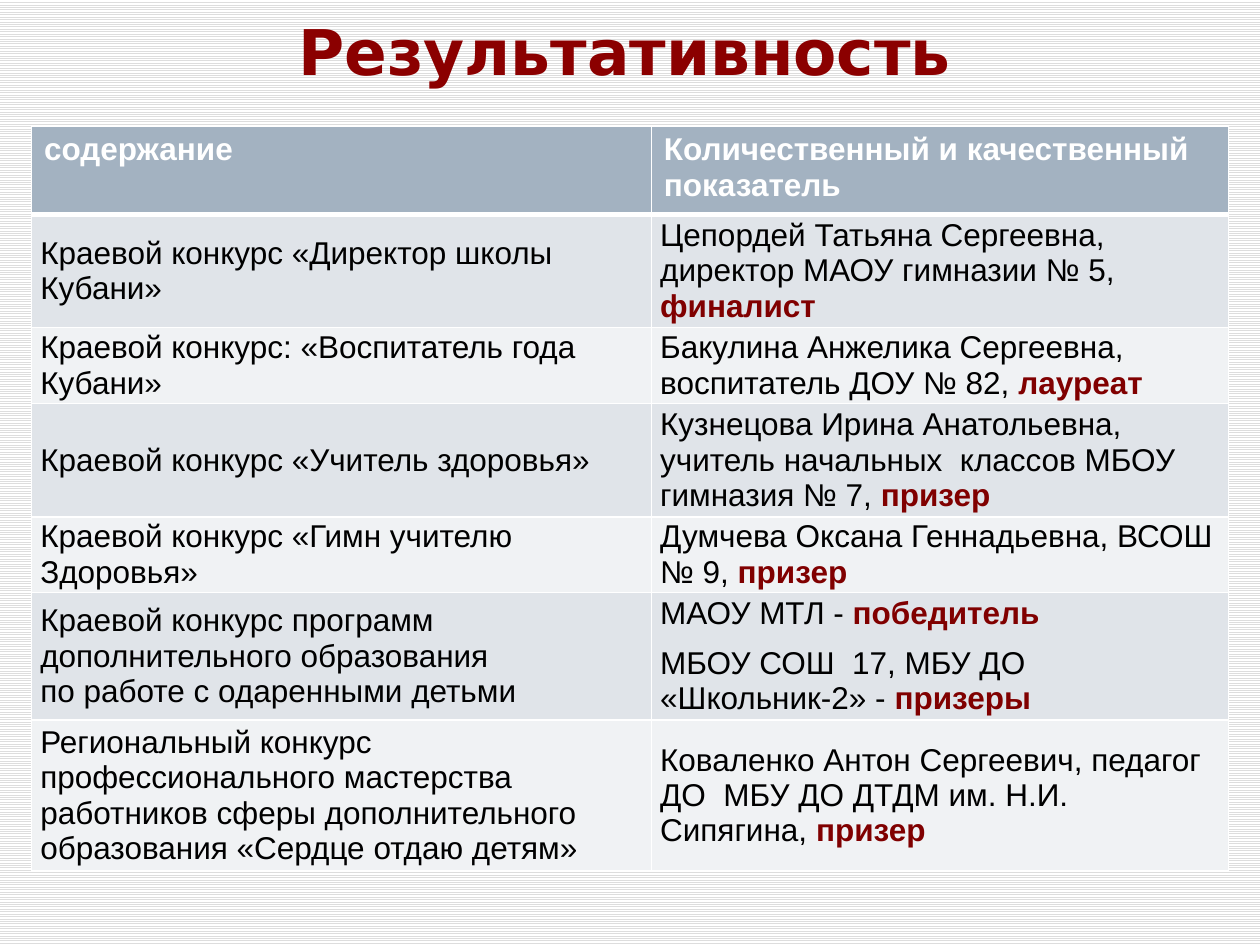
from dataclasses import dataclass

from lxml.etree import SubElement
from pptx import Presentation
from pptx.dml.color import RGBColor
from pptx.enum.dml import MSO_PATTERN
from pptx.enum.text import MSO_ANCHOR, PP_ALIGN
from pptx.oxml.ns import qn
from pptx.util import Inches, Pt


@dataclass(frozen=True)
class Theme:
    title_font: str = "DejaVu Sans"
    body_font: str = "Arial"
    title_size: int = 36
    body_size: int = 18
    title: str = "8B0000"
    award: str = "800000"
    text: str = "000000"
    white: str = "FFFFFF"
    stripe: str = "DDDDDD"
    header: str = "A3B2C1"
    bands: tuple[str, str] = ("E0E4E9", "F0F2F4")


@dataclass(frozen=True)
class Result:
    """A paragraph: plain wording followed by a highlighted award."""
    wording: str
    award: str = ""


@dataclass(frozen=True)
class Row:
    height: float
    contest: str
    results: tuple[Result, ...]


THEME = Theme()
COLUMN_WIDTHS = (4.92, 4.58)
HEADER = Row(0.7, "содержание", (Result("Количественный и качественный показатель"),))
ROWS = (
    Row(0.9, "Краевой конкурс «Директор школы Кубани»",
        (Result("Цепордей Татьяна Сергеевна, директор МАОУ гимназии № 5, ", "финалист"),)),
    Row(0.6, "Краевой конкурс: «Воспитатель года Кубани»",
        (Result("Бакулина Анжелика Сергеевна, воспитатель ДОУ № 82, ", "лауреат"),)),
    Row(0.9, "Краевой конкурс «Учитель здоровья»",
        (Result("Кузнецова Ирина Анатольевна, учитель начальных  классов МБОУ гимназия № 7, ",
                "призер"),)),
    Row(0.6, "Краевой конкурс «Гимн учителю Здоровья»",
        (Result("Думчева Оксана Геннадьевна, ВСОШ № 9, ", "призер"),)),
    Row(1.01, "Краевой конкурс программ дополнительного образования \vпо работе с одаренными детьми",
        (Result("МАОУ МТЛ - ", "победитель"),
         Result("МБОУ СОШ  17, МБУ ДО «Школьник-2» - ", "призеры"))),
    Row(1.2, "Региональный конкурс профессионального мастерства работников сферы "
             "дополнительного образования «Сердце отдаю детям»",
        (Result("Коваленко Антон Сергеевич, педагог ДО  МБУ ДО ДТДМ им. Н.И. Сипягина, ",
                "призер"),)),
)


def rgb(color: str) -> RGBColor:
    return RGBColor.from_string(color)


def style_font(font, name: str, size: int, color: str, bold: bool) -> None:
    font.name, font.size, font.bold = name, Pt(size), bold
    font.color.rgb = rgb(color)


def set_borders(cell, top: float, bottom: float) -> None:
    """Draw white cell borders; widths are in points."""
    tc_pr = cell._tc.get_or_add_tcPr()
    edges = {"lnL": 1, "lnR": 1, "lnT": top, "lnB": bottom}
    for i, (tag, width) in enumerate(edges.items()):
        ln = SubElement(tc_pr, qn(f"a:{tag}"), w=str(Pt(width)))
        fill = SubElement(ln, qn("a:solidFill"))
        SubElement(fill, qn("a:srgbClr"), val=THEME.white)
        tc_pr.insert(i, ln)


def fill_cell(cell, results: tuple[Result, ...], row: int) -> None:
    is_header = row == 0
    cell.fill.solid()
    cell.fill.fore_color.rgb = rgb(THEME.header if is_header else THEME.bands[(row - 1) % 2])
    set_borders(cell, top=3 if row == 1 else 1, bottom=3 if is_header else 1)
    cell.vertical_anchor = MSO_ANCHOR.TOP if is_header else MSO_ANCHOR.MIDDLE
    cell.margin_left = cell.margin_right = Inches(0.1 if is_header else 0.07)
    cell.margin_top = cell.margin_bottom = Inches(0.05 if is_header else 0)
    tf = cell.text_frame
    for i, result in enumerate(results):
        p = tf.add_paragraph() if i else tf.paragraphs[0]
        p.text = result.wording
        p.space_after = Pt(0 if is_header else 8)
        style_font(p.font, THEME.body_font, THEME.body_size,
                   THEME.white if is_header else THEME.text, is_header)
        if result.award:
            r = p.add_run()
            r.text = result.award
            r.font.bold = True
            r.font.color.rgb = rgb(THEME.award)


def add_title(s, text: str) -> None:
    sp = s.shapes.add_textbox(Inches(0.67), Inches(0.08), Inches(8.75), Inches(0.67))
    tf = sp.text_frame
    tf.word_wrap = True
    tf.vertical_anchor = MSO_ANCHOR.BOTTOM
    p = tf.paragraphs[0]
    p.text = text
    p.alignment = PP_ALIGN.CENTER
    style_font(p.font, THEME.title_font, THEME.title_size, THEME.title, True)


def add_results_table(s, rows: tuple[Row, ...]) -> None:
    table = s.shapes.add_table(
        len(rows), len(COLUMN_WIDTHS), Inches(0.25), Inches(1),
        Inches(sum(COLUMN_WIDTHS)), Inches(sum(row.height for row in rows))).table
    for column, width in zip(table.columns, COLUMN_WIDTHS):
        column.width = Inches(width)
    for i, row in enumerate(rows):
        table.rows[i].height = Inches(row.height)
        fill_cell(table.cell(i, 0), (Result(row.contest),), i)
        fill_cell(table.cell(i, 1), row.results, i)


def main() -> None:
    prs = Presentation()
    prs.slide_width, prs.slide_height = Inches(10), Inches(7.5)
    s = prs.slides.add_slide(prs.slide_layouts[6])
    background = s.background.fill
    background.patterned()
    background.pattern = MSO_PATTERN.LIGHT_HORIZONTAL
    background.fore_color.rgb = rgb(THEME.stripe)
    background.back_color.rgb = rgb(THEME.white)
    add_title(s, "Результативность ")
    add_results_table(s, (HEADER, *ROWS))
    prs.save("out.pptx")


if __name__ == "__main__":
    main()
